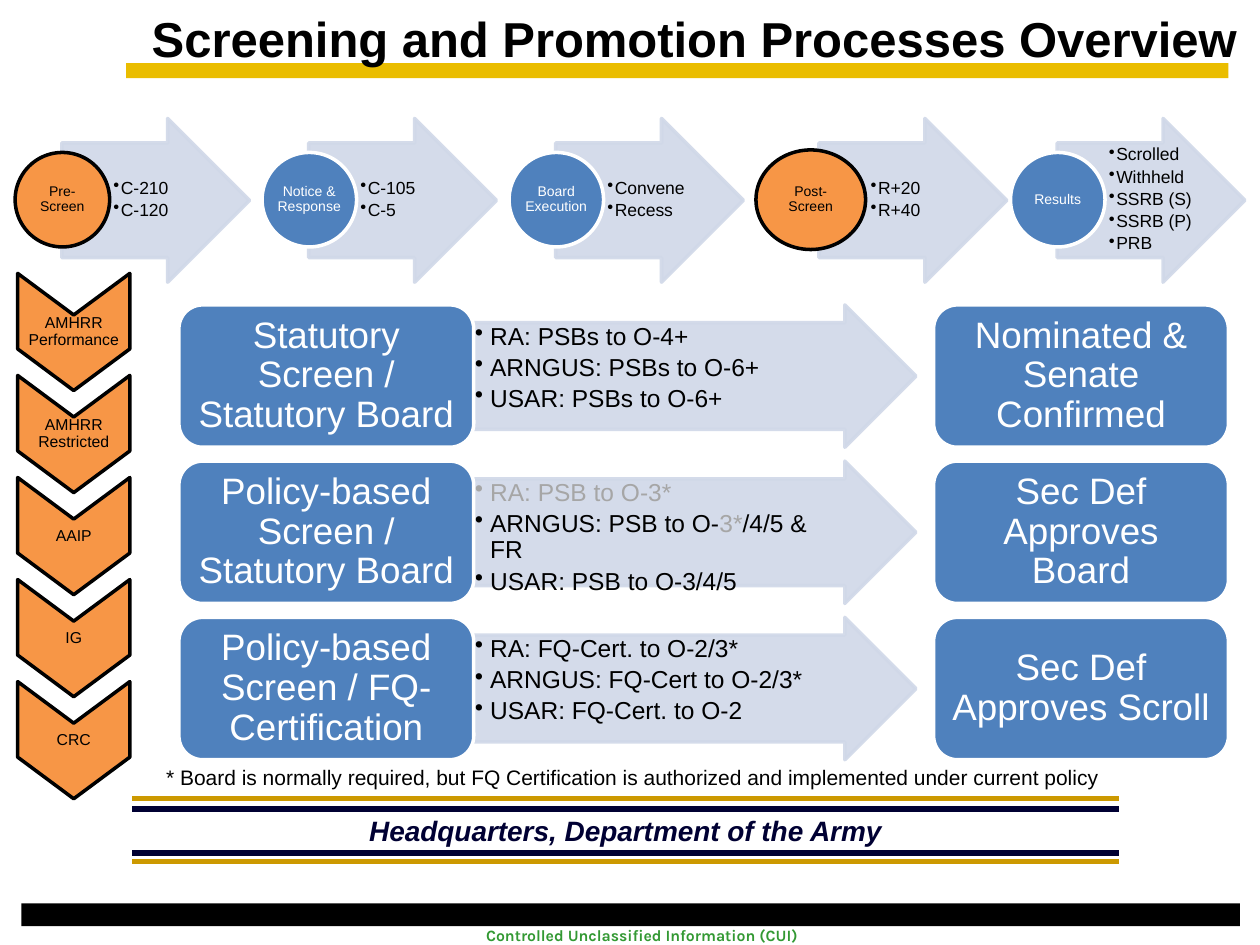
from dataclasses import dataclass

from lxml.etree import SubElement
from pptx import Presentation
from pptx.dml.color import RGBColor
from pptx.enum.shapes import MSO_CONNECTOR, MSO_SHAPE as SHAPE
from pptx.enum.text import MSO_ANCHOR as ANCHOR, MSO_AUTO_SIZE as AUTO_SIZE, PP_ALIGN as ALIGN
from pptx.oxml.ns import qn
from pptx.util import Inches, Pt


@dataclass(frozen=True)
class Theme:
    font: str = "Arial"
    marking_font: str = "Karla"
    black: str = "000000"
    white: str = "FFFFFF"
    muted: str = "A6A6A6"
    blue: str = "4F81BD"
    pale: str = "D0D8E8"
    orange: str = "F79646"
    yellow: str = "EABD00"
    gold: str = "CC9900"
    navy: str = "000033"
    green: str = "339933"
    title: int = 28
    box: int = 21
    banner: int = 16
    bullet: int = 14
    note: int = 12
    stage_list: int = 10
    small: int = 9
    circle: int = 8


THEME = Theme()

# Stage: arrow left, circle box, highlighted, name, items
STAGES = [
    (0.49, (0.12, 1.21, 0.75, 0.75), True, "Pre-Screen", ["C-210", "C-120"]),
    (2.45, (2.08, 1.21, 0.75, 0.75), False, "Notice & Response", ["C-105", "C-5"]),
    (4.41, (4.04, 1.21, 0.75, 0.75), False, "Board Execution", ["Convene", "Recess"]),
    (6.5, (6, 1.19, 0.87, 0.79), True, "Post-Screen", ["R+20", "R+40"]),
    (8.39, (8.02, 1.21, 0.75, 0.75), False, "Results",
     ["Scrolled", "Withheld", "SSRB (S)", "SSRB (P)", "PRB"]),
]
SCREENS = ["AMHRR Performance", "AMHRR Restricted", "AAIP", "IG", "CRC"]
# Process: name, details, outcome; a detail is a string or (text, colour) runs
PROCESSES = [
    ("Statutory Screen / Statutory Board",
     ["RA: PSBs to O-4+", "ARNGUS: PSBs to O-6+", "USAR: PSBs to O-6+"],
     "Nominated & Senate Confirmed"),
    ("Policy-based Screen / Statutory Board",
     [[("RA: PSB to O-3*", THEME.muted)],
      [("ARNGUS: PSB to O-", THEME.black), ("3*", THEME.muted), ("/4/5 & FR", THEME.black)],
      "USAR: PSB to O-3/4/5"],
     "Sec Def Approves Board"),
    ("Policy-based Screen / FQ-Certification",
     ["RA: FQ-Cert. to O-2/3*", "ARNGUS: FQ-Cert to O-2/3*", "USAR: FQ-Cert. to O-2"],
     "Sec Def Approves Scroll"),
]


def color(value):
    return RGBColor.from_string(value)


def write_text(shape, paragraphs, size, fill=THEME.black, font=THEME.font, bold=False,
               italic=False, align=ALIGN.LEFT, anchor=ANCHOR.TOP, wrap=True,
               insets=(0.1, 0.05, 0.1, 0.05), line_spacing=None, bullet_indent=None):
    frame = shape.text_frame
    frame.word_wrap, frame.auto_size = wrap, AUTO_SIZE.NONE
    frame.vertical_anchor = anchor
    (frame.margin_left, frame.margin_top,
     frame.margin_right, frame.margin_bottom) = map(Inches, insets)
    for index, content in enumerate(paragraphs):
        paragraph = frame.paragraphs[0] if index == 0 else frame.add_paragraph()
        if bullet_indent:
            properties = paragraph._p.get_or_add_pPr()
            properties.set("marL", str(Inches(bullet_indent)))
            properties.set("indent", str(-Inches(bullet_indent)))
            SubElement(properties, qn("a:buChar")).set("char", "•")
            paragraph.space_after = Pt(round(size * 0.19, 1))
        paragraph.alignment = align
        if line_spacing:
            paragraph.line_spacing = line_spacing
        runs = [(content, fill)] if isinstance(content, str) else content
        for text, run_color in runs:
            run = paragraph.add_run()
            run.text = text
            run.font.name, run.font.size = font, Pt(size)
            run.font.bold, run.font.italic = bold, italic
            run.font.color.rgb = color(run_color)


def style_shape(shape, fill, line=None, opacity=None):
    shape.shadow.inherit = False
    shape.fill.solid()
    shape.fill.fore_color.rgb = color(fill)
    if line is None:
        shape.line.fill.background()
        return
    shape.line.color.rgb = color(line)
    shape.line.width = Pt(2)
    if opacity:
        for value in shape._element.spPr.iter(qn("a:srgbClr")):
            SubElement(value, qn("a:alpha")).set("val", str(opacity * 1000))


def add_box(slide, kind, box, fill, line=None, opacity=None, adjustments=()):
    shape = slide.shapes.add_shape(kind, *map(Inches, box))
    for index, value in enumerate(adjustments):
        shape.adjustments[index] = value
    style_shape(shape, fill, line, opacity)
    return shape


def add_text(slide, box, paragraphs, size, **text_format):
    shape = slide.shapes.add_textbox(*map(Inches, box))
    write_text(shape, paragraphs, size, **text_format)


def add_title(slide, box):
    title = slide.shapes.title
    title.left, title.top, title.width, title.height = map(Inches, box)
    write_text(title, ["Screening and Promotion Processes Overview"], THEME.title,
               bold=True, align=ALIGN.CENTER)


def add_banner(slide, box):
    left, top, width, height = box
    add_text(slide, (left, top + 0.07, width, 0.37), ["Headquarters, Department of the Army"],
             THEME.banner, fill=THEME.navy, bold=True, italic=True, align=ALIGN.CENTER)
    rules = [(0, THEME.gold), (0.08, THEME.navy), (height - 0.07, THEME.navy), (height, THEME.gold)]
    for offset, line_color in rules:
        y = Inches(top + offset)
        rule = slide.shapes.add_connector(MSO_CONNECTOR.STRAIGHT, Inches(left), y,
                                          Inches(left + width), y)
        rule.line.color.rgb = color(line_color)
        rule.line.width = Pt(3)
        SubElement(rule._element.spPr, qn("a:effectLst"))


def add_stage(slide, box, circle_box, highlighted, name, items):
    left, top, width, height = box
    add_box(slide, SHAPE.RIGHT_ARROW, box, THEME.pale, THEME.pale, 90, (0.7, 0.5))
    add_text(slide, (left + 0.38, top + 0.19, width / 2, height * 0.7), items, THEME.stage_list,
             anchor=ANCHOR.MIDDLE, insets=(0.03, 0.01, 0.01, 0.01), line_spacing=0.9,
             bullet_indent=0.06)
    fill, ink, line = ((THEME.orange, THEME.black, THEME.black) if highlighted
                       else (THEME.blue, THEME.white, THEME.white))
    circle = add_box(slide, SHAPE.OVAL, circle_box, fill, line)
    write_text(circle, [name], THEME.circle, fill=ink, align=ALIGN.CENTER,
               anchor=ANCHOR.MIDDLE, insets=(0.01,) * 4, line_spacing=0.9)


def add_screen(slide, box, name):
    left, top, width, height = box
    right, middle, bottom, notch = left + width, left + width / 2, top + height, 0.33
    builder = slide.shapes.build_freeform(Inches(right), Inches(top), scale=1.0)
    outline = [(right, bottom - notch), (middle, bottom), (left, bottom - notch),
               (left, top), (middle, top + notch)]
    builder.add_line_segments([(Inches(x), Inches(y)) for x, y in outline], close=True)
    chevron = builder.convert_to_shape()
    style_shape(chevron, THEME.orange, THEME.black)
    write_text(chevron, [name], THEME.small, align=ALIGN.CENTER, anchor=ANCHOR.MIDDLE,
               insets=(0.01, 0.35, 0.01, 0.35), line_spacing=0.9)


def add_process(slide, box, name, details, outcome):
    left, top, width, height = box
    label_width = 2.34
    arrow = add_box(slide, SHAPE.RIGHT_ARROW, (left + label_width, top, 3.51, height),
                    THEME.pale, THEME.pale, 90, (0.75, 0.5))
    write_text(arrow, details, THEME.bullet, insets=(0.01, 0.01, 0.29, 0.01),
               line_spacing=0.9, bullet_indent=0.12)
    for label_left, text in ((left, name), (left + width - label_width, outcome)):
        label = add_box(slide, SHAPE.ROUNDED_RECTANGLE, (label_left, top, label_width, height),
                        THEME.blue, THEME.white)
        write_text(label, [text], THEME.box, fill=THEME.white, align=ALIGN.CENTER,
                   anchor=ANCHOR.MIDDLE, insets=(0.08, 0.04, 0.08, 0.04), line_spacing=0.9)


def main():
    presentation = Presentation()
    presentation.slide_width, presentation.slide_height = Inches(10), Inches(7.5)
    slide = presentation.slides.add_slide(presentation.slide_layouts[5])

    # Title bar, footer bar and marking
    add_box(slide, SHAPE.RECTANGLE, (1, 0.5, 8.75, 0.12), THEME.yellow)
    add_box(slide, SHAPE.RECTANGLE, (0.17, 7.17, 9.67, 0.18), THEME.black)
    add_text(slide, (3.76, 7.3, 2.86, 0.25), ["Controlled Unclassified Information (CUI)"],
             THEME.small, fill=THEME.green, font=THEME.marking_font, bold=True, wrap=False)
    add_banner(slide, (1.05, 6.34, 7.83, 0.5))
    add_title(slide, (0.51, 0.02, 10, 0.57))
    # The title stands in front of its bar
    slide.shapes._spTree.append(slide.shapes.title._element)

    # Process rows, screening chevrons and timeline stages
    for index, process in enumerate(PROCESSES):
        add_process(slide, (1.42, 2.42 + index * 1.24, 8.33, 1.13), *process)
    for index, name in enumerate(SCREENS):
        add_screen(slide, (0.14, 2.17 + index * 0.81, 0.89, 0.93), name)
    for arrow_left, *stage in STAGES:
        add_stage(slide, (arrow_left, 0.94, 1.49, 1.3), *stage)

    # Footnote
    add_text(slide, (1.22, 6.02, 7.66, 0.3),
             ["* Board is normally required, but FQ Certification is authorized "
              "and implemented under current policy"], THEME.note, wrap=False)
    presentation.save("out.pptx")


if __name__ == "__main__":
    main()
